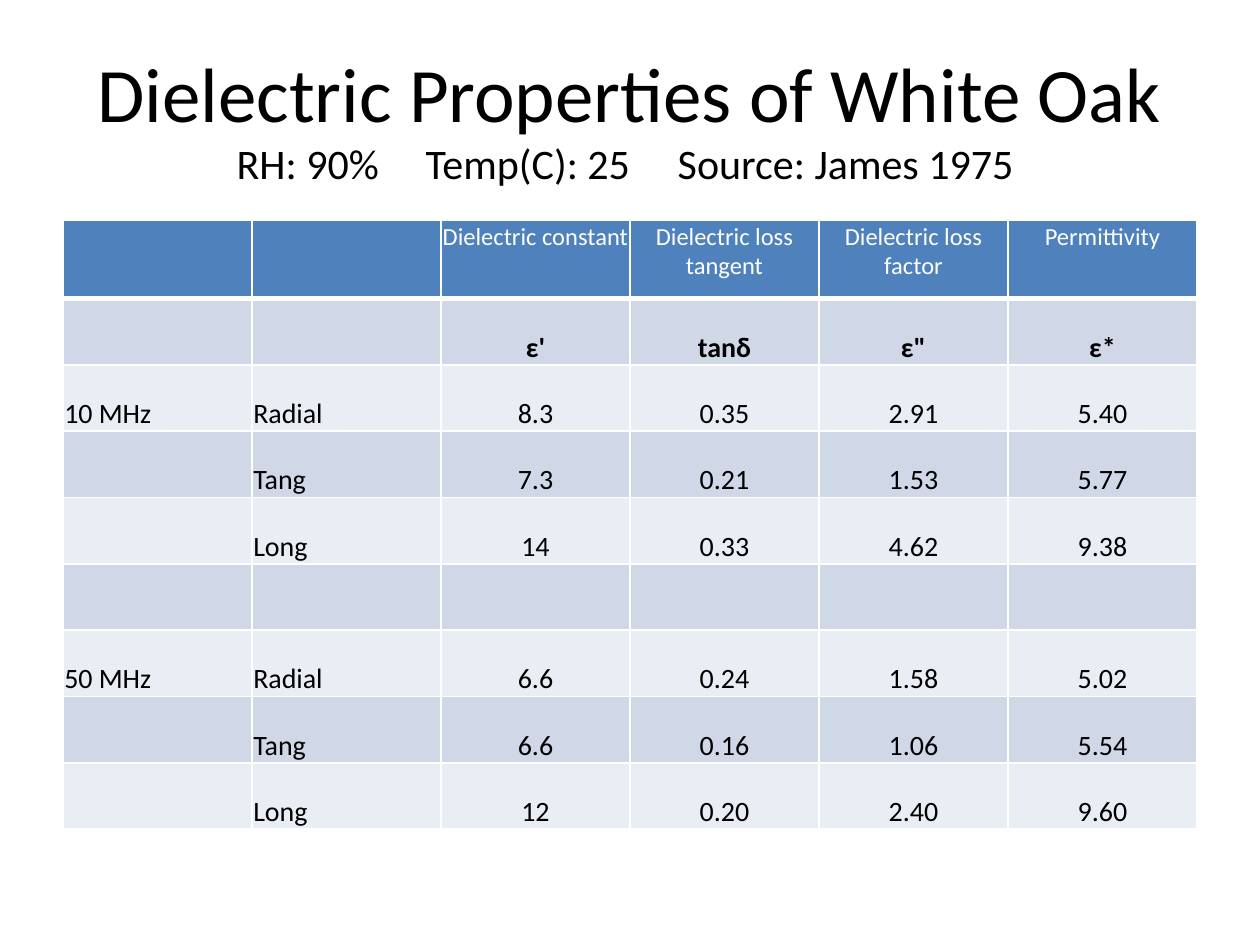
"""Build the slide on the dielectric properties of white oak."""
from lxml.etree import SubElement
from pptx import Presentation
from pptx.dml.color import RGBColor
from pptx.enum.text import MSO_ANCHOR, PP_ALIGN
from pptx.oxml.ns import qn
from pptx.util import Pt

BLACK = RGBColor(0x00, 0x00, 0x00)
WHITE = RGBColor(0xFF, 0xFF, 0xFF)
BLUE = RGBColor(0x4F, 0x81, 0xBD)
BAND_DARK = RGBColor(0xD0, 0xD8, 0xE8)
BAND_LIGHT = RGBColor(0xE9, 0xED, 0xF4)
FONT = "Calibri"

ROWS = [
    ["", "", "Dielectric constant", "Dielectric loss tangent", "Dielectric loss factor", "Permittivity"],
    ["", "", "ε'", "tanδ", 'ε"', "ε*"],
    ["10 MHz", "Radial", "8.3", "0.35", "2.91", "5.40"],
    ["", "Tang", "7.3", "0.21", "1.53", "5.77"],
    ["", "Long", "14", "0.33", "4.62", "9.38"],
    [""] * 6,
    ["50 MHz", "Radial", "6.6", "0.24", "1.58", "5.02"],
    ["", "Tang", "6.6", "0.16", "1.06", "5.54"],
    ["", "Long", "12", "0.20", "2.40", "9.60"],
]


def set_font(font, size, color, bold=False):
    font.name, font.size, font.bold = FONT, Pt(size), bold
    font.color.rgb = color


def add_border(cell, side, width):
    ln = SubElement(cell._tc.get_or_add_tcPr(), qn(f"a:ln{side}"), w=str(Pt(width)))
    fill = SubElement(ln, qn("a:solidFill"))
    SubElement(fill, qn("a:srgbClr"), val=str(WHITE))


prs = Presentation()
prs.slide_width, prs.slide_height = Pt(720), Pt(540)
s = prs.slides.add_slide(prs.slide_layouts[6])

sp = s.shapes.add_textbox(Pt(36), Pt(21.6), Pt(648), Pt(90))
tf = sp.text_frame
tf.word_wrap = True
tf.vertical_anchor = MSO_ANCHOR.MIDDLE
p = tf.paragraphs[0]
p.text = "Dielectric Properties of White Oak\vRH: 90%\tTemp(C): 25\tSource: James 1975 "
p.alignment = PP_ALIGN.CENTER
for r, size in zip(p.runs, (44, 24)):
    set_font(r.font, size, BLACK)

tbl = s.shapes.add_table(len(ROWS), 6, Pt(36), Pt(126), Pt(648), Pt(347.8)).table
for col in tbl.columns:
    col.width = Pt(108)
for i, values in enumerate(ROWS):
    tbl.rows[i].height = Pt(37.9 if i else 44.6)
    for j, value in enumerate(values):
        cell = tbl.cell(i, j)
        for side in "LRTB":
            header_edge = (i, side) in ((0, "B"), (1, "T"))
            add_border(cell, side, 3 if header_edge else 1)
        cell.fill.solid()
        cell.fill.fore_color.rgb = (BAND_DARK if i % 2 else BAND_LIGHT) if i else BLUE
        if not value:
            continue
        cell.margin_left = cell.margin_right = cell.margin_top = Pt(0.75)
        cell.margin_bottom = Pt(0)
        cell.vertical_anchor = MSO_ANCHOR.BOTTOM if i else MSO_ANCHOR.TOP
        p = cell.text_frame.paragraphs[0]
        p.text = value
        p.alignment = PP_ALIGN.LEFT if j < 2 else PP_ALIGN.CENTER
        set_font(p.runs[0].font, 16 if i else 14, BLACK if i else WHITE, i == 1)

prs.save("out.pptx")
